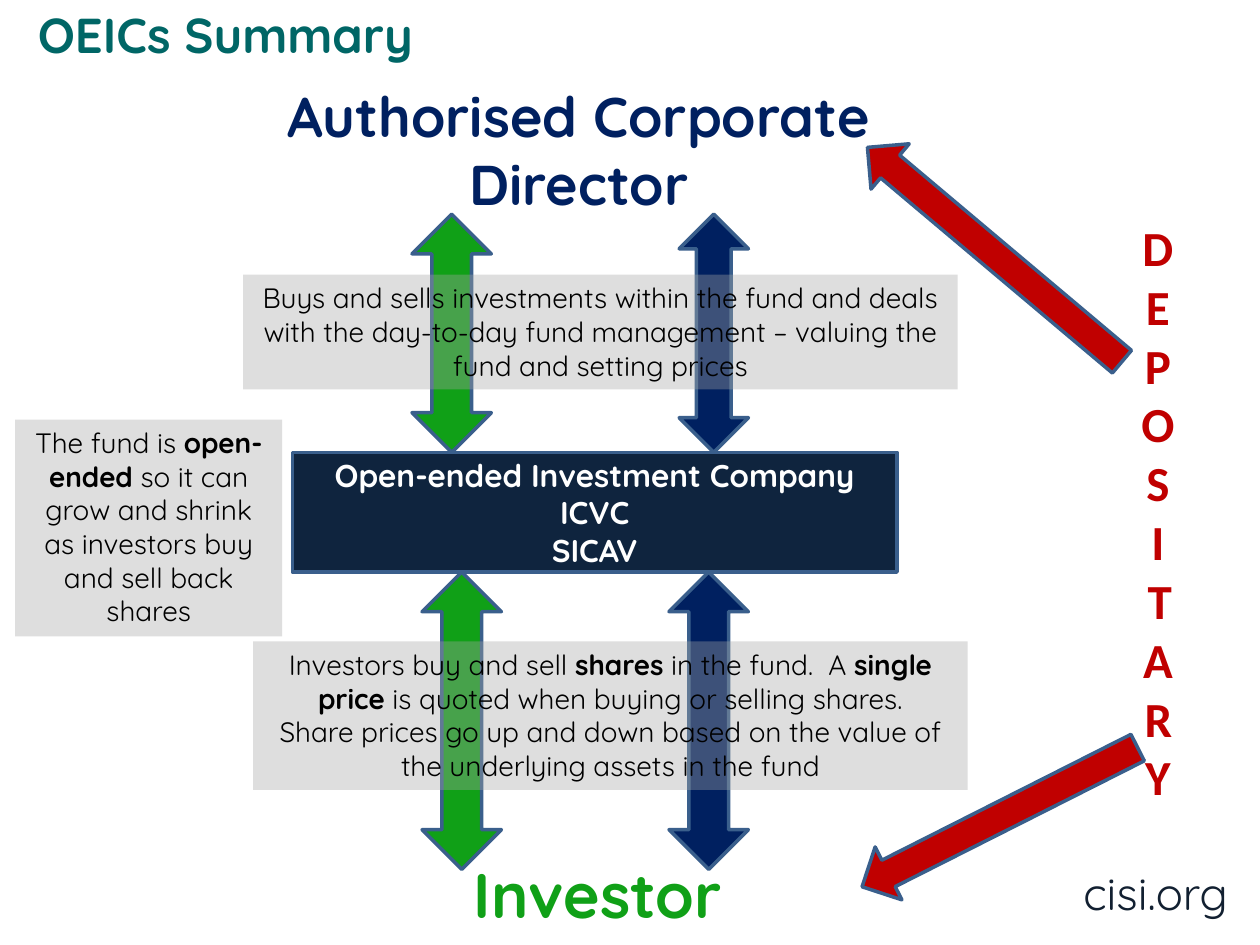
from lxml.etree import SubElement
from pptx import Presentation
from pptx.dml.color import RGBColor
from pptx.enum.shapes import MSO_SHAPE
from pptx.enum.text import MSO_ANCHOR, MSO_AUTO_SIZE, PP_ALIGN
from pptx.oxml.ns import qn
from pptx.util import Inches, Pt

COLS, ROWS = 100, 75
COLORS = {
    "teal": "006666", "navy": "002060", "ink": "122031", "box": "0F243E",
    "green": "10A017", "red": "C00000", "border": "3A5F8C", "note": "A6A6A6",
    "black": "000000", "white": "FFFFFF", "halo": "FEFEFE", "purple": "5E457C",
}
SLIDE_W, SLIDE_H = Inches(10), Inches(7.5)


def rgb(name):
    return RGBColor.from_string(COLORS[name])


def grid(col, row, cols, rows):
    dx, dy = SLIDE_W / COLS, SLIDE_H / ROWS
    return [int(n) for n in (col * dx, row * dy, cols * dx, rows * dy)]


def style_run(r, size, color, bold=False, font="Quicksand"):
    r.font.name = font
    r.font.size = Pt(size)
    r.font.bold = bold
    r.font.color.rgb = rgb(color)


def fill_text(tf, paragraphs, size, color, bold=False, font="Quicksand",
              align=PP_ALIGN.CENTER):
    for i, text in enumerate(paragraphs):
        p = tf.paragraphs[0] if i == 0 else tf.add_paragraph()
        p.alignment = align
        for j, part in enumerate(text.split("**")):
            r = p.add_run()
            r.text = part
            style_run(r, size, color, bold or j % 2 == 1, font)


def outline_text(tf, color, width):
    for p in tf.paragraphs:
        for r in p.runs:
            rPr = r.font._element
            ln = SubElement(rPr, qn("a:ln"), w=str(Pt(width)))
            fill = SubElement(ln, qn("a:solidFill"))
            SubElement(fill, qn("a:srgbClr"), val=COLORS[color])
            rPr.insert(0, ln)


def add_label(s, place, paragraphs, size, color, wrap=False, **style):
    tf = s.shapes.add_textbox(*grid(*place)).text_frame
    tf.word_wrap = wrap
    tf.auto_size = MSO_AUTO_SIZE.SHAPE_TO_FIT_TEXT
    fill_text(tf, paragraphs, size, color, **style)
    return tf


def add_block(s, kind, place, color, rotation=0):
    sp = s.shapes.add_shape(kind, *grid(*place))
    sp.shadow.inherit = False
    sp.fill.solid()
    sp.fill.fore_color.rgb = rgb(color)
    sp.line.color.rgb = rgb("border")
    sp.line.width = Pt(2)
    sp.rotation = rotation
    return sp


def add_note(s, place, paragraphs):
    sp = add_block(s, MSO_SHAPE.RECTANGLE, place, "note")
    sp.line.fill.background()
    clr = sp.fill._xPr.find(qn("a:solidFill"))[0]
    SubElement(clr, qn("a:alpha"), val="37000")
    tf = sp.text_frame
    tf.word_wrap = True
    tf.vertical_anchor = MSO_ANCHOR.TOP
    tf.auto_size = MSO_AUTO_SIZE.SHAPE_TO_FIT_TEXT
    fill_text(tf, paragraphs, 16, "black")


def add_title(s, text):
    sp = s.shapes.title
    sp.left, sp.top, sp.width, sp.height = grid(2, 0, 74.8, 5.4)
    tf = sp.text_frame
    tf.text = text
    tf.vertical_anchor = MSO_ANCHOR.MIDDLE
    p = tf.paragraphs[0]
    p.alignment = PP_ALIGN.LEFT
    style_run(p.runs[0], 28, "teal", True)


def add_company(s):
    sp = add_block(s, MSO_SHAPE.RECTANGLE, (23.2, 35.9, 48, 9.5), "box")
    tf = sp.text_frame
    tf.vertical_anchor = MSO_ANCHOR.MIDDLE
    fill_text(tf, ["Open-ended Investment Company", "ICVC", "SICAV"],
              18, "white", bold=True)


def add_flows(s, flows):
    for place, color in flows:
        add_block(s, MSO_SHAPE.UP_DOWN_ARROW, place, color)


def add_depositary(s):
    tf = add_label(s, (88.1, 12.3, 7.6, 56.6), ["DEPOSITARY"], 28, "red",
                   bold=True, font="Calibri")
    tf._txBody.bodyPr.set("vert", "wordArtVert")
    outline_text(tf, "purple", 0.71)
    for place, rotation in (((76.6, 7, 4.7, 26.4), 310.1),
                            ((77, 52.6, 4.7, 24.5), 243.2)):
        add_block(s, MSO_SHAPE.UP_ARROW, place, "red", rotation)


def main():
    prs = Presentation()
    prs.slide_width, prs.slide_height = SLIDE_W, SLIDE_H
    s = prs.slides.add_slide(prs.slide_layouts[5])

    add_label(s, (85, 68.2, 15, 5.4), ["cisi.org"], 26, "ink", wrap=True,
              align=PP_ALIGN.LEFT)
    add_title(s, "OEICs Summary")
    add_company(s)

    investors = add_label(s, (35.8, 67.4, 23.3, 7.1), ["Investors"],
                          36, "green", bold=True)
    outline_text(investors, "halo", 1.5)
    add_flows(s, [((33.5, 45.4, 6.3, 23.6), "green"),
                  ((53.1, 45.4, 6.3, 23.6), "navy")])
    add_note(s, (20.1, 50.9, 56.7, 11.8), [
        "Investors buy and sell **shares** in the fund.  A **single price** "
        "is quoted when buying or selling shares.",
        "Share prices go up and down based on the value of the underlying "
        "assets in the fund"])

    director = add_label(s, (20.9, 6, 50.1, 11.8),
                         ["Authorised Corporate", "Director"],
                         32, "navy", bold=True)
    outline_text(director, "halo", 1.5)
    add_note(s, (1.2, 33.3, 21.2, 17.2), [
        "The fund is **open-ended** so it can grow and shrink as investors "
        "buy and sell back shares"])
    add_flows(s, [((53.9, 17, 5.5, 18.9), "navy"),
                  ((32.7, 17, 6.3, 18.9), "green")])
    add_note(s, (19.3, 21.8, 56.7, 9.1), [
        "Buys and sells investments within the fund and deals with the "
        "day-to-day fund management – valuing the fund and setting prices"])

    add_depositary(s)
    prs.save("out.pptx")


if __name__ == "__main__":
    main()
